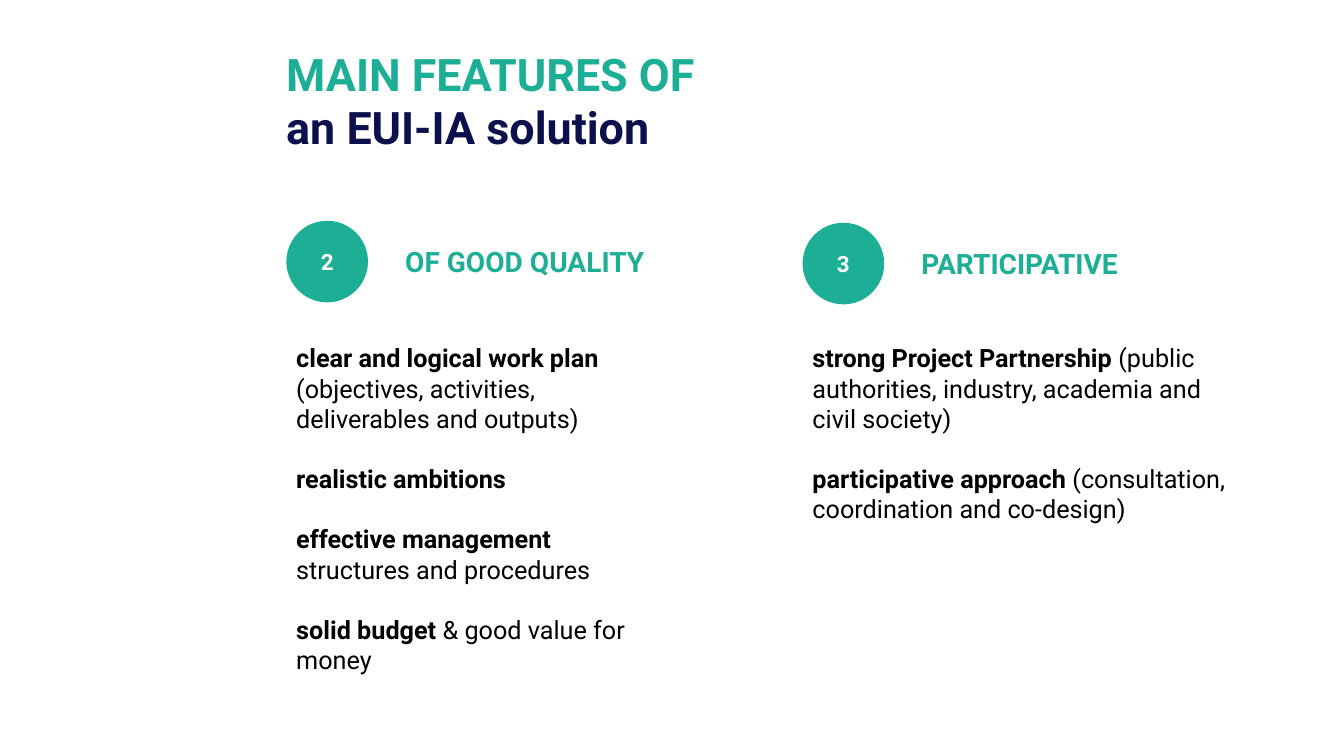
from pptx import Presentation
from pptx.dml.color import RGBColor
from pptx.enum.shapes import MSO_SHAPE
from pptx.enum.text import MSO_ANCHOR, MSO_AUTO_SIZE, PP_ALIGN
from pptx.util import Pt

PX = 9144  # EMU in a px: 100 px to the inch
GREEN, NAVY, BLACK, WHITE = "1CAF96", "0C114D", "000000", "FFFFFF"


def color(code):
    return RGBColor.from_string(code)


class Page:
    def __init__(self, deck, font):
        self.slide = deck.slides.add_slide(deck.slide_layouts[6])
        self.font = font

    def run(self, para, text, size, code, bold=True):
        run = para.add_run()
        run.text = text
        run.font.name = self.font
        run.font.size = Pt(size)
        run.font.bold = bold
        run.font.color.rgb = color(code)

    def box(self, home, *rect):
        """Add a wrapping text box to home (slide or group); return its frame."""
        frame = home.shapes.add_textbox(*(n * PX for n in rect)).text_frame
        frame.word_wrap = True
        frame.auto_size = MSO_AUTO_SIZE.SHAPE_TO_FIT_TEXT
        return frame

    def title(self, first, second, *rect):
        para = self.box(self.slide, *rect).paragraphs[0]
        self.run(para, first, 32, GREEN)
        para.add_line_break()
        self.run(para, second, 32, NAVY)

    def badge(self, group, label, left, top):
        disc = group.shapes.add_shape(
            MSO_SHAPE.OVAL, left * PX, top * PX, 81 * PX, 81 * PX)
        disc.shadow.inherit = False
        disc.fill.solid()
        disc.fill.fore_color.rgb = color(GREEN)
        disc.line.fill.background()
        frame = disc.text_frame
        frame.vertical_anchor = MSO_ANCHOR.MIDDLE
        para = frame.paragraphs[0]
        para.alignment = PP_ALIGN.CENTER
        self.run(para, label, 16, WHITE)

    def head(self, label, text, left, top, width):
        """Group a numbered disc with the heading to its right."""
        group = self.slide.shapes.add_group_shape()
        self.badge(group, label, left, top)
        frame = self.box(group, left + 108, top + 19, width, 44)
        self.run(frame.paragraphs[0], text, 20, GREEN)

    def points(self, items, *rect):
        """Write (bold, plain) pairs, one paragraph each."""
        frame = self.box(self.slide, *rect)
        for i, (strong, plain) in enumerate(items):
            para = frame.add_paragraph() if i else frame.paragraphs[0]
            if i:
                para.space_before = Pt(21.5)
            self.run(para, strong, 18, BLACK)
            if plain:
                self.run(para, plain, 18, BLACK, False)


QUALITY = [
    ("clear and logical work plan ",
     "(objectives, activities, deliverables and outputs)"),
    ("realistic ambitions", ""),
    ("effective management", " structures and procedures"),
    ("solid budget ", "& good value for money"),
]
PARTNERS = [
    ("strong Project Partnership ",
     "(public authorities, industry, academia and civil society)"),
    ("participative approach ", "(consultation, coordination and co-design)"),
]


def main():
    deck = Presentation()
    deck.slide_width, deck.slide_height = 1333 * PX, 750 * PX
    page = Page(deck, "Roboto")
    page.title("MAIN FEATURES OF", "an EUI-IA solution", 274, 41, 551, 118)
    page.head("2", "OF GOOD QUALITY", 284, 219, 551)
    page.points(QUALITY, 284, 335, 383, 343)
    page.head("3", "PARTICIPATIVE", 796, 221, 334)
    page.points(PARTNERS, 796, 335, 442, 192)
    deck.save("out.pptx")


if __name__ == "__main__":
    main()
